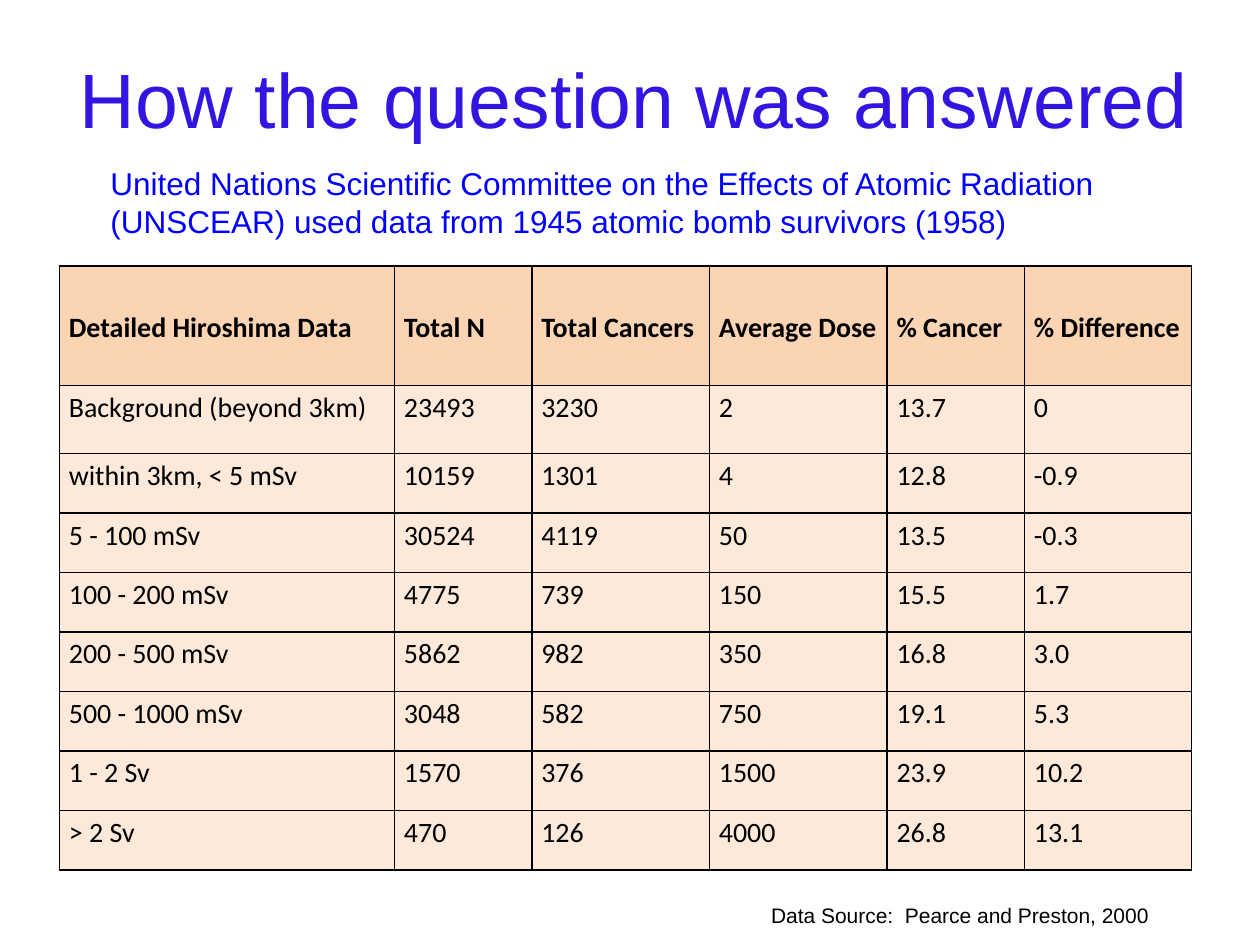
from lxml.etree import SubElement
from pptx import Presentation
from pptx.dml.color import RGBColor as Rgb
from pptx.enum.text import MSO_ANCHOR as Anchor, PP_ALIGN as Align
from pptx.oxml.ns import qn
from pptx.util import Pt

COLORS = {
    "title": "3215E1",
    "subtitle": "0000FF",
    "text": "000000",
    "border": "000000",
    "header": "FBD4B4",
    "body": "FDE9D9",
}

COLUMN_WIDTHS = [191.5, 78.5, 101.5, 101.5, 78.5, 95.5]
ROW_HEIGHTS = [68.4, 38.9] + [34] * 7
SURVIVOR_DATA = [
    ["Detailed Hiroshima Data", "Total N", "Total Cancers",
     "Average Dose", "% Cancer", "% Difference"],
    ["Background (beyond 3km)", "23493", "3230", "2", "13.7", "0"],
    ["within 3km, < 5 mSv", "10159", "1301", "4", "12.8", "-0.9"],
    ["5 - 100 mSv", "30524", "4119", "50", "13.5", "-0.3"],
    ["100 - 200 mSv", "4775", "739", "150", "15.5", "1.7"],
    ["200 - 500 mSv", "5862", "982", "350", "16.8", "3.0"],
    ["500 - 1000 mSv", "3048", "582", "750", "19.1", "5.3"],
    ["1 - 2 Sv", "1570", "376", "1500", "23.9", "10.2"],
    ["> 2 Sv", "470", "126", "4000", "26.8", "13.1"],
]


class SlideBuilder:
    """Holds the style and the current slide."""

    text_font = "Arial"
    table_font = "Calibri"
    table_size = 16
    cell_margin = 5.4
    border_width = 1

    def __init__(self, page):
        self.page = page

    def style(self, para, font, size, color, bold=False):
        for span in para.runs:
            span.font.name = font
            span.font.size = Pt(size)
            span.font.bold = bold
            span.font.color.rgb = Rgb.from_string(COLORS[color])

    def text(self, words, left, top, width, height, size, color,
             align=Align.LEFT, anchor=Anchor.TOP):
        box = self.page.shapes.add_textbox(Pt(left), Pt(top), Pt(width), Pt(height))
        frame = box.text_frame
        frame.word_wrap = True
        frame.vertical_anchor = anchor
        frame.text = words
        para = frame.paragraphs[0]
        para.alignment = align
        self.style(para, self.text_font, size, color)

    def borders(self, cell):
        properties = cell._tc.get_or_add_tcPr()
        for position, side in enumerate(("a:lnL", "a:lnR", "a:lnT", "a:lnB")):
            line = SubElement(properties, qn(side), w=str(Pt(self.border_width)))
            fill = SubElement(line, qn("a:solidFill"))
            SubElement(fill, qn("a:srgbClr"), val=COLORS["border"])
            # Border lines come before the cell fill
            properties.insert(position, line)

    def cell(self, cell, words, header):
        cell.margin_left = cell.margin_right = Pt(self.cell_margin)
        cell.margin_top = cell.margin_bottom = 0
        cell.vertical_anchor = Anchor.MIDDLE if header else Anchor.TOP
        cell.fill.solid()
        cell.fill.fore_color.rgb = Rgb.from_string(COLORS["header" if header else "body"])
        self.borders(cell)
        para = cell.text_frame.paragraphs[0]
        para.text = words
        para.line_spacing = 1.15
        self.style(para, self.table_font, self.table_size, "text", bold=header)

    def table(self, rows, left, top, widths, heights):
        table = self.page.shapes.add_table(
            len(rows), len(widths), Pt(left), Pt(top),
            Pt(sum(widths)), Pt(sum(heights))).table
        for column, width in zip(table.columns, widths):
            column.width = Pt(width)
        for row, height in zip(table.rows, heights):
            row.height = Pt(height)
        for row_index, row in enumerate(rows):
            for column_index, words in enumerate(row):
                self.cell(table.cell(row_index, column_index), words, row_index == 0)


def main():
    deck = Presentation()
    deck.slide_width, deck.slide_height = Pt(720), Pt(540)
    builder = SlideBuilder(deck.slides.add_slide(deck.slide_layouts[6]))

    # Title and introduction
    builder.text("How the question was answered", 16.5, 21.5, 692, 68.5, 44, "title",
                 align=Align.CENTER, anchor=Anchor.MIDDLE)
    builder.text("United Nations Scientific Committee on the Effects of Atomic Radiation "
                 "(UNSCEAR) used data from 1945 atomic bomb survivors (1958)",
                 56, 90, 608, 181.5, 18, "subtitle")

    # Survivor data by dose
    builder.table(SURVIVOR_DATA, 34, 152, COLUMN_WIDTHS, ROW_HEIGHTS)

    # Source note
    builder.text("Data Source:  Pearce and Preston, 2000", 433.5, 512, 242, 21.6, 12, "text")

    deck.save("out.pptx")


if __name__ == "__main__":
    main()
